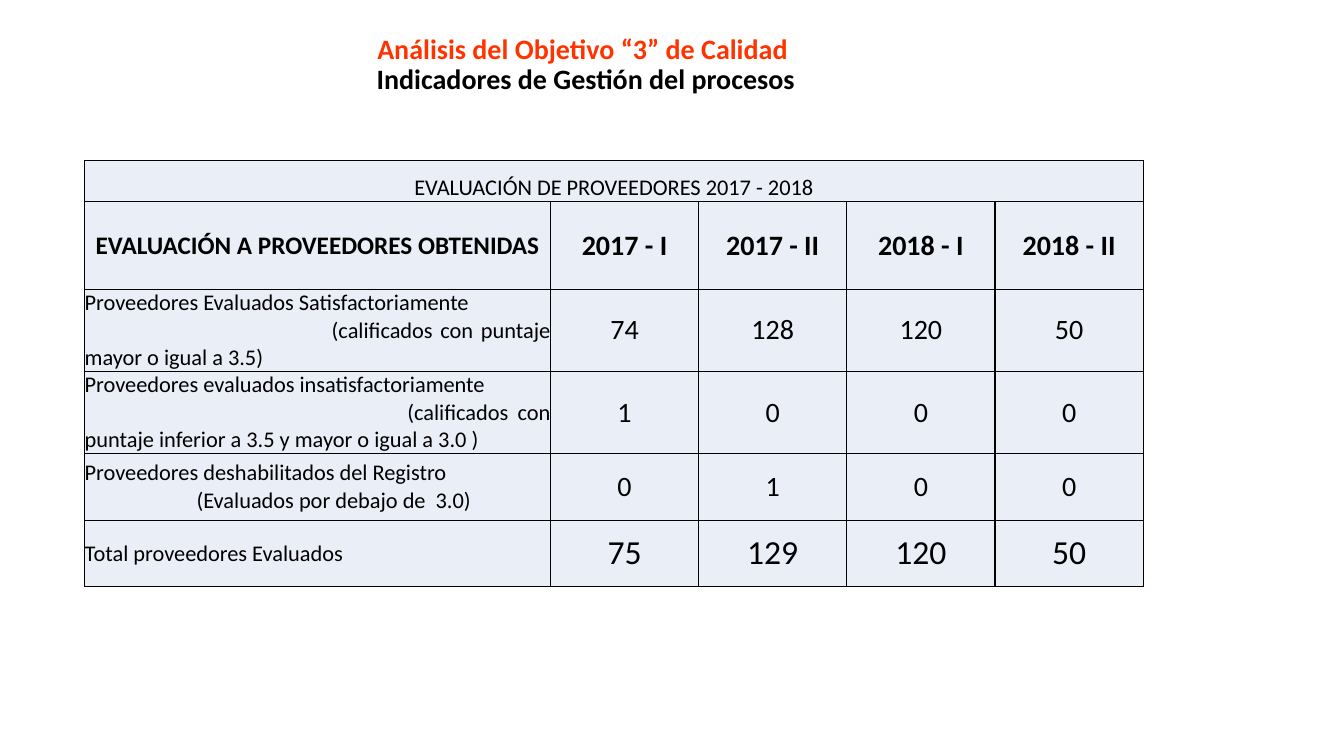
from lxml import etree
from pptx import Presentation
from pptx.dml.color import RGBColor
from pptx.enum import text as t
from pptx.oxml.ns import qn
from pptx.util import Inches, Pt

RED = RGBColor(0xFF, 0x33, 0x00)
BLACK = RGBColor(0, 0, 0)
PALE = RGBColor(0xEA, 0xEF, 0xF7)

CENTER = t.PP_ALIGN.CENTER
JUST = t.PP_ALIGN.JUSTIFY
COLS = [4.62] + [1.47] * 4
ROWS = [0.41, 0.87, 0.81, 0.81, 0.66, 0.66]
HEADS = ["EVALUACIÓN A PROVEEDORES OBTENIDAS",
         "2017 - I", "2017 - II", "2018 - I", "2018 - II"]
DATA = [
    ("Proveedores Evaluados Satisfactoriamente",
     "(calificados con puntaje mayor o igual a 3.5)", 2.45, [74, 128, 120, 50], 20),
    ("Proveedores evaluados insatisfactoriamente",
     "(calificados con puntaje inferior a 3.5 y mayor o igual a 3.0 )", 3.2, [1, 0, 0, 0], 20),
    ("Proveedores deshabilitados del Registro",
     "(Evaluados por debajo de  3.0)", 1.11, [0, 1, 0, 0], 20),
    ("Total proveedores Evaluados", "", 0, [75, 129, 120, 50], 24),
]


def write(par, text, size=16, color=BLACK, bold=False, align=CENTER, indent=0):
    """Add a formatted run to a paragraph."""
    par.alignment = align
    if indent:
        par._p.get_or_add_pPr().set("indent", str(Inches(indent)))
    run = par.add_run()
    run.text = text
    font = run.font
    font.name, font.size, font.bold = "Calibri", Pt(size), bold
    font.color.rgb = color


def style(cell):
    """Fill a cell, clear its margins and rule its four sides."""
    cell.fill.solid()
    cell.fill.fore_color.rgb = PALE
    cell.margin_left = cell.margin_right = cell.margin_top = cell.margin_bottom = 0
    cell.vertical_anchor = t.MSO_ANCHOR.MIDDLE
    props = cell._tc.get_or_add_tcPr()
    for i, side in enumerate("LRTB"):
        line = etree.Element(qn("a:ln" + side), w=str(Pt(1)))
        fill = etree.SubElement(line, qn("a:solidFill"))
        etree.SubElement(fill, qn("a:srgbClr"), val=str(BLACK))
        props.insert(i, line)


def add_title(slide, x, y, w, h):
    """Place the two-line title in its box."""
    title = slide.shapes.title
    title.left, title.top, title.width, title.height = map(Inches, (x, y, w, h))
    frame = title.text_frame
    frame.auto_size = t.MSO_AUTO_SIZE.NONE
    frame.vertical_anchor = t.MSO_ANCHOR.BOTTOM
    par = frame.paragraphs[0]
    par.line_spacing = 0.9
    write(par, "Análisis del Objetivo “3” de Calidad ", size=20, color=RED, bold=True)
    par.add_line_break()
    write(par, "Indicadores de Gestión del procesos", size=20, bold=True)


def add_grid(slide, x, y):
    """Place the supplier table with its top left corner at x, y."""
    box = map(Inches, (x, y, sum(COLS), sum(ROWS)))
    grid = slide.shapes.add_table(len(ROWS), len(COLS), *box).table
    for col, width in zip(grid.columns, COLS):
        col.width = Inches(width)
    for row, height in zip(grid.rows, ROWS):
        row.height = Inches(height)
    for cell in grid.iter_cells():
        style(cell)

    top = grid.cell(0, 0)
    top.merge(grid.cell(0, len(COLS) - 1))
    top.vertical_anchor = t.MSO_ANCHOR.BOTTOM
    write(top.text_frame.paragraphs[0], "EVALUACIÓN DE PROVEEDORES 2017 - 2018")

    for c, head in enumerate(HEADS):
        par = grid.cell(1, c).text_frame.paragraphs[0]
        write(par, head, size=20 if c else 18, bold=True)

    for r, (label, note, indent, values, size) in enumerate(DATA, 2):
        frame = grid.cell(r, 0).text_frame
        write(frame.paragraphs[0], label, align=JUST)
        if note:
            write(frame.add_paragraph(), note, align=JUST, indent=indent)
        for c, value in enumerate(values, 1):
            write(grid.cell(r, c).text_frame.paragraphs[0], str(value), size=size)


def main():
    """Build and save the slide."""
    deck = Presentation()
    deck.slide_width, deck.slide_height = Inches(13.33), Inches(7.5)
    slide = deck.slides.add_slide(deck.slide_layouts[5])
    add_title(slide, 0.5, 0.21, 10.62, 0.79)
    add_grid(slide, 0.84, 1.59)
    deck.save("out.pptx")


if __name__ == "__main__":
    main()
